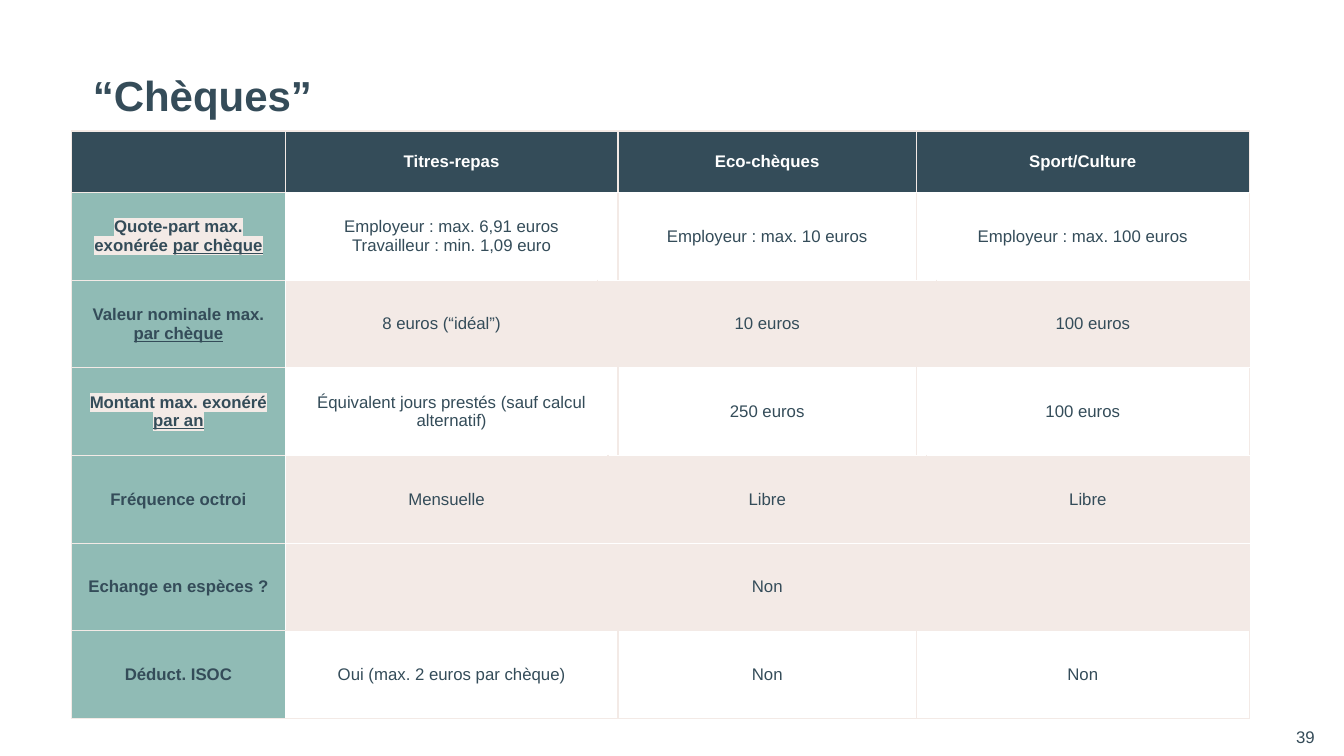
from dataclasses import dataclass
from typing import Any

from lxml.etree import SubElement
from pptx import Presentation
from pptx.dml.color import RGBColor as Color
from pptx.enum.text import MSO_ANCHOR as Anchor, PP_ALIGN as Align
from pptx.oxml.ns import qn
from pptx.util import Inches, Pt


@dataclass(frozen=True)
class Theme:
    font: str = "Arial"
    ink: str = "354C59"
    navy: str = "344C59"
    teal: str = "90BBB5"
    sand: str = "F3EAE6"
    white: str = "FFFFFF"
    title_size: int = 30
    body_size: int = 12
    border_width: int = 1


@dataclass(frozen=True)
class Run:
    text: str
    color: str
    size: int
    bold: bool = False
    underline: bool = False
    highlight: str = ""


@dataclass(frozen=True)
class Value:
    text: str
    span: int = 1


@dataclass(frozen=True)
class Row:
    label: str
    underlined: str
    values: tuple[Value, ...]
    shaded: bool = False
    highlighted: bool = False


@dataclass(frozen=True)
class TextBox:
    text: str
    left: float
    top: float
    width: float
    height: float
    size: int
    bold: bool
    paragraph_format: dict[str, Any]


THEME = Theme()
COLUMN_WIDTHS = (2.12, 3.1, 0.1, 0.1, 2.96, 0.1, 0.1, 3.1)
HEADER_HEIGHT, ROW_HEIGHT = 0.61, 0.87
TABLE_LEFT, TABLE_TOP = 0.71, 1.3

HEADINGS = (Value(""), Value("Titres-repas", 3), Value("Eco-chèques"), Value("Sport/Culture", 3))
ROWS = (
    Row("Quote-part max. exonérée ", "par chèque",
        (Value("Employeur : max. 6,91 euros\nTravailleur : min. 1,09 euro", 3),
         Value("Employeur : max. 10 euros"), Value("Employeur : max. 100 euros", 3)),
        highlighted=True),
    Row("Valeur nominale max. ", "par chèque",
        (Value("8 euros (“idéal”)"), Value("10 euros", 5), Value("100 euros")), shaded=True),
    Row("Montant max. exonéré ", "par an",
        (Value("Équivalent jours prestés (sauf calcul alternatif)", 3),
         Value("250 euros"), Value("100 euros", 3)), highlighted=True),
    Row("Fréquence octroi", "",
        (Value("Mensuelle", 2), Value("Libre", 3), Value("Libre", 2)), shaded=True),
    Row("Echange en espèces ?", "", (Value("Non", 7),), shaded=True),
    Row("Déduct. ISOC", "",
        (Value("Oui (max. 2 euros par chèque)", 3), Value("Non"), Value("Non", 3))),
)
TEXT_BOXES = (
    TextBox("“Chèques”", 0.92, 0.4, 9.35, 1.15, THEME.title_size, True,
            {"alignment": Align.LEFT, "line_spacing": 0.9}),
    TextBox("39", 12.22, 7.21, 0.82, 0.2, THEME.body_size, False, {"alignment": Align.RIGHT}),
)
BOX_FORMAT = {"word_wrap": True, "vertical_anchor": Anchor.MIDDLE, "margin_left": 0,
              "margin_top": 0, "margin_right": 0, "margin_bottom": 0}
CELL_FORMAT = {"vertical_anchor": Anchor.MIDDLE, "margin_left": Inches(0.07), "margin_top": 0,
               "margin_right": Inches(0.07), "margin_bottom": 0}


def apply_format(target: Any, values: dict[str, Any]) -> None:
    for name, value in values.items():
        setattr(target, name, value)


def add_run(paragraph: Any, content: Run) -> None:
    run = paragraph.add_run()
    run.text = content.text
    run.font.color.rgb = Color.from_string(content.color)
    if content.highlight:
        highlight = SubElement(run.font._element, qn("a:highlight"))
        SubElement(highlight, qn("a:srgbClr"), val=content.highlight)
    apply_format(run.font, {"name": THEME.font, "size": Pt(content.size),
                            "bold": content.bold, "underline": content.underline})


def add_text_box(slide: Any, box: TextBox) -> None:
    shape = slide.shapes.add_textbox(*map(Inches, (box.left, box.top, box.width, box.height)))
    apply_format(shape.text_frame, BOX_FORMAT)
    paragraph = shape.text_frame.paragraphs[0]
    apply_format(paragraph, box.paragraph_format)
    add_run(paragraph, Run(box.text, THEME.ink, box.size, box.bold))


def style_cell(cell: Any, fill: str, borders: dict[str, str]) -> None:
    """Set margins, fill and the border colours keyed by side: L, R, T, B."""
    apply_format(cell, CELL_FORMAT)
    properties = cell._tc.get_or_add_tcPr()
    for side in "LRTB":
        line = SubElement(properties, qn(f"a:ln{side}"), w=str(Pt(THEME.border_width)))
        solid = SubElement(line, qn("a:solidFill"))
        SubElement(solid, qn("a:srgbClr"), val=borders.get(side, THEME.sand))
    cell.fill.solid()
    cell.fill.fore_color.rgb = Color.from_string(fill)


def fill_cell(table: Any, row: int, column: int, span: int, lines: list[list[Run]],
              fill: str, borders: dict[str, str]) -> None:
    """Merge the spanned cells, style them and write one paragraph per line."""
    cell = table.cell(row, column)
    if span > 1:
        cell.merge(table.cell(row, column + span - 1))
    for offset in range(span):
        style_cell(table.cell(row, column + offset), fill, borders)
    for index, line in enumerate(lines):
        paragraph = cell.text_frame.add_paragraph() if index else cell.text_frame.paragraphs[0]
        paragraph.alignment = Align.CENTER
        for run in line:
            add_run(paragraph, run)


def fill_values(table: Any, row: int, first_column: int, values: tuple[Value, ...],
                color: str, bold: bool, fill: str, borders: dict[str, str]) -> None:
    column = first_column
    for value in values:
        lines = [[Run(text, color, THEME.body_size, bold)] for text in value.text.splitlines()]
        left = {"L": THEME.white} if column == 1 and row else {}
        fill_cell(table, row, column, value.span, lines, fill, borders | left)
        column += value.span


def fill_row(table: Any, index: int, row: Row) -> None:
    highlight = THEME.sand if row.highlighted else ""
    label = [Run(text, THEME.navy, THEME.body_size, True, underline, highlight)
             for text, underline in ((row.label, False), (row.underlined, True)) if text]
    fill_cell(table, index, 0, 1, [label], THEME.teal, {"R": THEME.white})
    borders = {"T": THEME.white if index < len(ROWS) else THEME.sand,
               "B": THEME.white if index < len(ROWS) - 1 else THEME.sand}
    fill_values(table, index, 1, row.values, THEME.navy, False,
                THEME.sand if row.shaded else THEME.white, borders)


def add_voucher_table(slide: Any) -> None:
    heights = (HEADER_HEIGHT, *[ROW_HEIGHT] * len(ROWS))
    frame = slide.shapes.add_table(
        len(heights), len(COLUMN_WIDTHS), Inches(TABLE_LEFT), Inches(TABLE_TOP),
        Inches(sum(COLUMN_WIDTHS)), Inches(sum(heights)))
    table = frame.table
    apply_format(table, {"first_row": False, "horz_banding": False})
    for column, width in zip(table.columns, COLUMN_WIDTHS):
        column.width = Inches(width)
    for table_row, height in zip(table.rows, heights):
        table_row.height = Inches(height)
    fill_values(table, 0, 0, HEADINGS, THEME.white, True, THEME.navy, {"B": THEME.white})
    for index, row in enumerate(ROWS, start=1):
        fill_row(table, index, row)


def main() -> None:
    presentation = Presentation()
    apply_format(presentation, {"slide_width": Inches(13.33), "slide_height": Inches(7.5)})
    slide = presentation.slides.add_slide(presentation.slide_layouts[6])
    for box in TEXT_BOXES:
        add_text_box(slide, box)
    add_voucher_table(slide)
    presentation.save("out.pptx")


if __name__ == "__main__":
    main()
